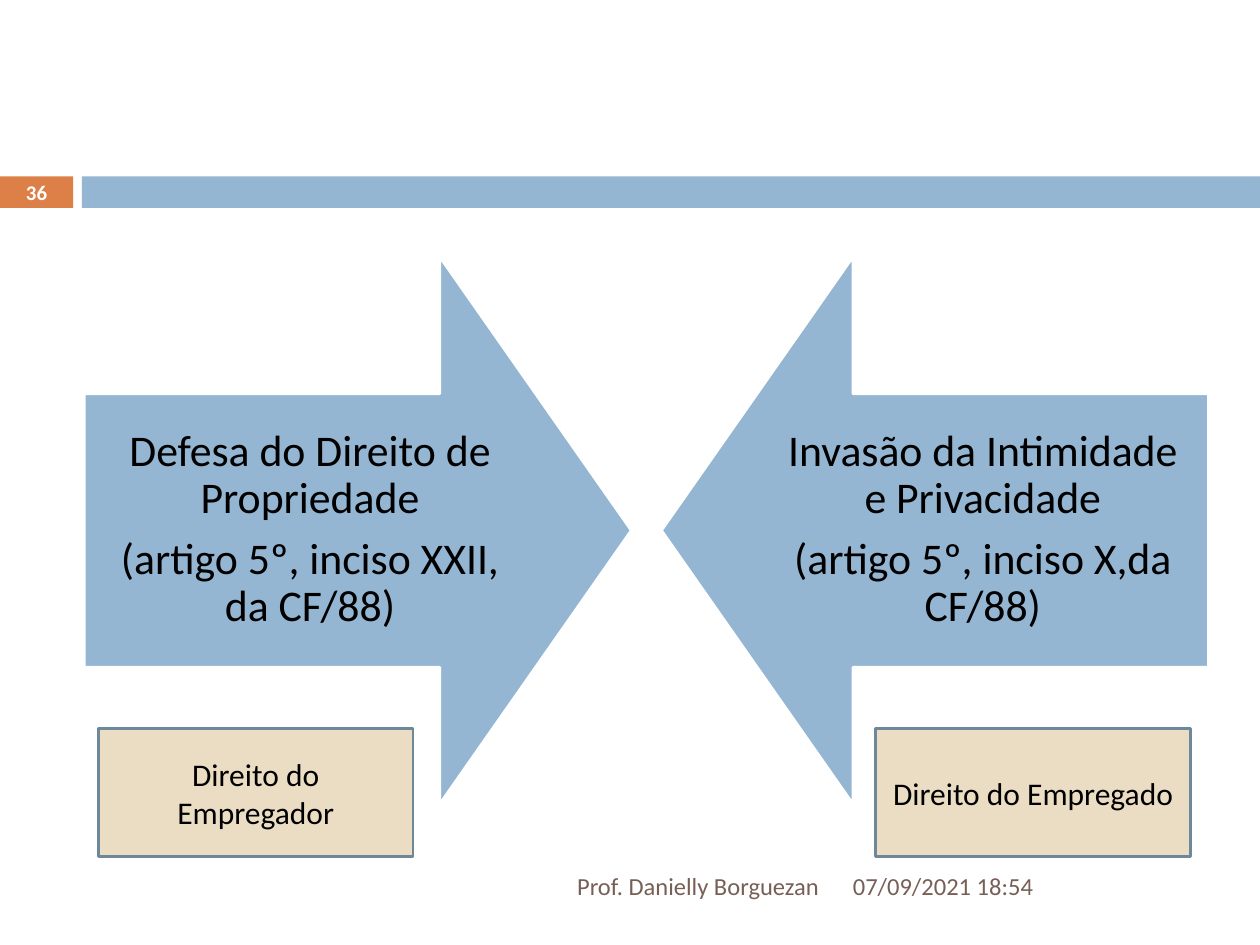
from pptx import Presentation
from pptx.dml.color import RGBColor
from pptx.enum.shapes import MSO_SHAPE as Kind
from pptx.enum.text import MSO_ANCHOR as Anchor, PP_ALIGN as Align
from pptx.util import Inches, Pt

THEME = {
    "font": "Calibri",
    "blue": "94B6D2", "orange": "DD8047", "sand": "EBDDC3",
    "edge": "6D879B", "white": "FFFFFF", "black": "000000", "brown": "775F55",
    "claim": 25, "label": 18, "foot": 14, "number": 11.9,
}

# Arrow left, turn, text left, paragraphs, label left, label
SIDES = [
    (0.67, 270, 0.67,
     ["Defesa do Direito de Propriedade", "(artigo 5º, inciso XXII, da CF/88)"],
     0.78, "Direito do Empregador"),
    (5.25, 90, 6.01,
     ["Invasão da Intimidade e Privacidade", "(artigo 5º, inciso X,da CF/88)"],
     6.95, "Direito do Empregado"),
]
# Text, box, alignment, size, colour, bold
NOTES = [
    ("07/09/2021 18:54", (6.67, 6.83, 2.92, 0.4), Align.LEFT, "foot", "brown", False),
    ("Prof. Danielly Borguezan", (0.67, 6.83, 5.93, 0.4), Align.RIGHT, "foot", "brown", False),
    ("36", (0, 1.39, 0.58, 0.27), Align.CENTER, "number", "white", True),
]
BARS = [((0, 1.4, 0.58, 0.25), "orange"), ((0.65, 1.4, 9.35, 0.25), "blue")]
ARROW_TOP, ARROW_SIZE = 2.04, 4.34
CLAIM_TOP, CLAIM_WIDTH, CLAIM_HEIGHT, CLAIM_INSET = 3.12, 3.58, 2.17, 0.19
LABEL_TOP, LABEL_WIDTH, LABEL_HEIGHT = 5.78, 2.5, 1.02


def color(name):
    return RGBColor.from_string(THEME[name])


def add_shape(slide, kind, box, fill, line=None):
    shape = slide.shapes.add_shape(kind, *map(Inches, box))
    shape.shadow.inherit = False
    shape.fill.solid()
    shape.fill.fore_color.rgb = color(fill)
    if line:
        shape.line.color.rgb = color(line)
        shape.line.width = Pt(1.5)
    else:
        shape.line.fill.background()
    return shape


def write(shape, lines, size, ink="black", align=Align.CENTER, bold=False,
          spacing=None, gap=0):
    frame = shape.text_frame
    frame.word_wrap = True
    frame.vertical_anchor = Anchor.MIDDLE
    for i, line in enumerate(lines):
        para = frame.add_paragraph() if i else frame.paragraphs[0]
        para.alignment = align
        if spacing:
            para.line_spacing = spacing
        if i:
            para.space_before = Pt(gap)
        run = para.add_run()
        run.text = line
        run.font.name = THEME["font"]
        run.font.size = Pt(THEME[size])
        run.font.bold = bold
        run.font.color.rgb = color(ink)


def add_text(slide, box, lines, size, inset=None, **style):
    shape = slide.shapes.add_textbox(*map(Inches, box))
    if inset:
        frame = shape.text_frame
        frame.margin_left = frame.margin_right = Inches(inset)
        frame.margin_top = frame.margin_bottom = Inches(inset)
    write(shape, lines, size, **style)


def main():
    deck = Presentation()
    deck.slide_width, deck.slide_height = Inches(10), Inches(7.5)
    slide = deck.slides.add_slide(deck.slide_layouts[6])

    for box, fill in BARS:
        add_shape(slide, Kind.RECTANGLE, box, fill)

    for left, turn, text_left, claim, _, _ in SIDES:
        arrow = add_shape(slide, Kind.DOWN_ARROW,
                          (left, ARROW_TOP, ARROW_SIZE, ARROW_SIZE), "blue", "white")
        arrow.rotation = turn
        arrow.adjustments[0], arrow.adjustments[1] = 0.5, 0.35
        add_text(slide, (text_left, CLAIM_TOP, CLAIM_WIDTH, CLAIM_HEIGHT), claim,
                 "claim", CLAIM_INSET, spacing=0.9, gap=8)

    for text, box, align, size, ink, bold in NOTES:
        add_text(slide, box, [text], size, ink=ink, align=align, bold=bold)

    for *_, left, label in SIDES:
        rect = add_shape(slide, Kind.RECTANGLE,
                         (left, LABEL_TOP, LABEL_WIDTH, LABEL_HEIGHT), "sand", "edge")
        write(rect, [label], "label")

    deck.save("out.pptx")


if __name__ == "__main__":
    main()
